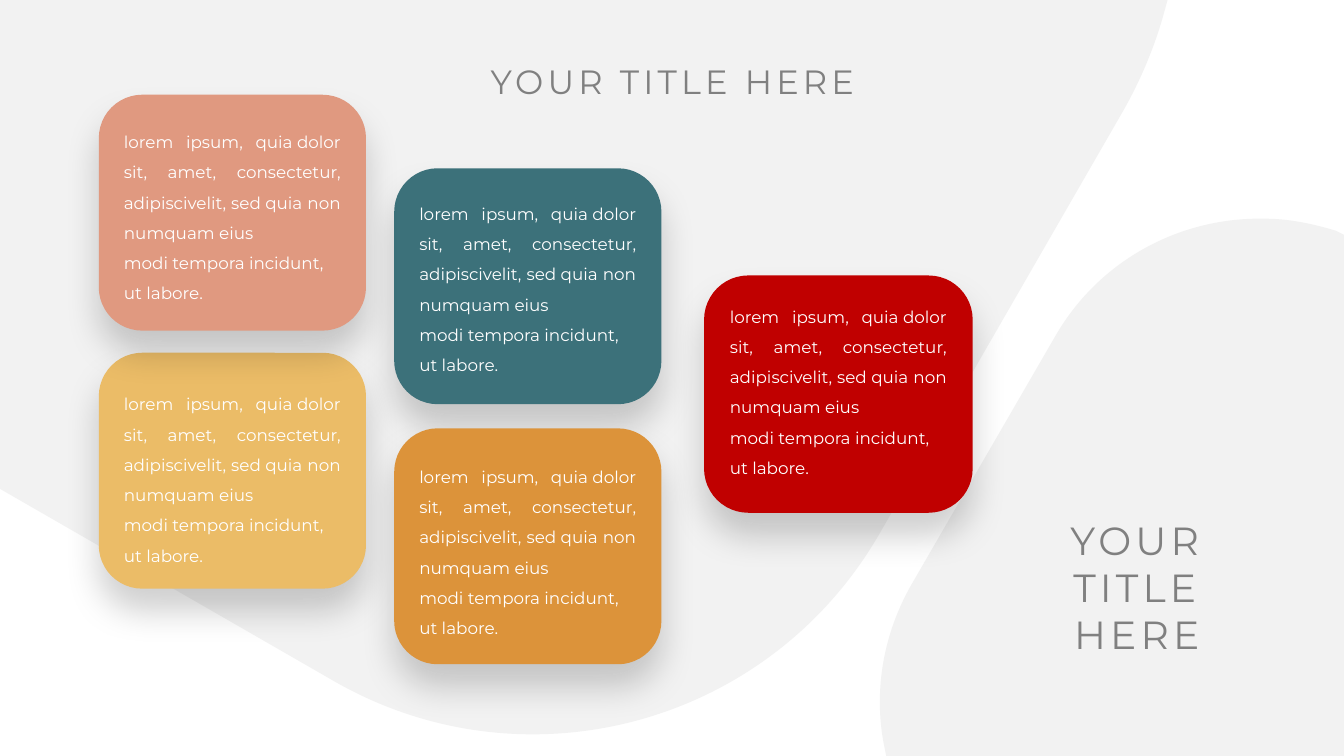
from pptx import Presentation
from pptx.dml.color import RGBColor
from pptx.enum.shapes import MSO_SHAPE as Preset
from pptx.enum.text import MSO_AUTO_SIZE as AutoSize, PP_ALIGN as Align
from pptx.oxml import parse_xml
from pptx.oxml.ns import nsdecls
from pptx.util import Inches, Pt

COLORS = {
    "blob": "F2F2F2", "title": "808080", "white": "FFFFFF", "shadow": "000000",
    "salmon": "E09980", "yellow": "EBBC67", "teal": "3C717A",
    "orange": "DC933A", "red": "C00000",
}
FONT = "Montserrat"
HARD_SPACE = chr(160)
BODY = ("lorem ipsum, quia_dolor sit, amet, consectetur, adipiscivelit, "
        "sed_quia non numquam_eius modi_tempora_incidunt, ut labore."
        ).replace("_", HARD_SPACE)
TITLE = "YOUR TITLE HERE"

CARD_SIZE = (2.65, 2.34)
TEXT_SIZE = (2.35, 1.88)
TEXT_INDENT = 0.15
CARDS = [
    ("yellow", 0.98, 3.5, 3.76),
    ("teal", 3.91, 1.67, 1.87),
    ("orange", 3.91, 4.25, 4.48),
    ("salmon", 0.98, 0.94, 1.16),
    ("red", 6.99, 2.74, 2.89),
]
TITLES = [
    ((10.08, 5.07, 2.39, 1.51), 28, True),
    ((4.76, 0.56, 3.82, 0.5), 24, False),
]
BLOBS = [
    ((8.73, 2.17, 4.61, 5.33),
     [(12.55, 2.17), (12.78, 2.17, 13.02, 2.22, 13.25, 2.29), (13.33, 2.33),
      (13.33, 7.5), (8.79, 7.5), (8.76, 7.35),
      (8.67, 6.84, 8.76, 6.29, 9.04, 5.8), (10.47, 3.33),
      (10.91, 2.57, 11.72, 2.15, 12.55, 2.17)]),
    ((0, 0, 11.58, 7.28),
     [(0, 0), (11.58, 0), (11.53, 0.18),
      (11.44, 0.49, 11.31, 0.8, 11.14, 1.1), (8.72, 5.3),
      (7.62, 7.2, 5.2, 7.85, 3.3, 6.75), (0, 4.85)]),
]


def color(name):
    return RGBColor.from_string(COLORS[name])


def outline_command(index, segment, left, top):
    tag = "moveTo" if index == 0 else "lnTo" if len(segment) == 2 else "cubicBezTo"
    points = "".join(f'<a:pt x="{Inches(x - left)}" y="{Inches(y - top)}"/>'
                     for x, y in zip(segment[::2], segment[1::2]))
    return parse_xml(f'<a:{tag} {nsdecls("a")}>{points}</a:{tag}>')


def add_blob(page, bounds, segments):
    left, top, width, height = bounds
    builder = page.shapes.build_freeform(Inches(left), Inches(top))
    builder.add_line_segments([(Inches(left + width), Inches(top + height))])
    blob = builder.convert_to_shape()
    outline = blob._element.spPr.find(".//{*}pathLst")[0]
    for command in list(outline):
        outline.remove(command)
    for index, segment in enumerate(segments):
        outline.append(outline_command(index, segment, left, top))
    outline.append(parse_xml(f'<a:close {nsdecls("a")}/>'))
    blob.shadow.inherit = False
    blob.fill.solid()
    blob.fill.fore_color.rgb = color("blob")
    blob.line.fill.background()


def add_text(page, place, text, size, shade, align, wrap=True, line_spacing=None, tracking=None):
    box = page.shapes.add_textbox(*map(Inches, place))
    frame = box.text_frame
    frame.word_wrap = wrap
    frame.auto_size = AutoSize.SHAPE_TO_FIT_TEXT
    para = frame.paragraphs[0]
    para.alignment = align
    if line_spacing:
        para.line_spacing = line_spacing
    span = para.add_run()
    span.text = text
    span.font.name = FONT
    span.font.size = Pt(size)
    span.font.color.rgb = color(shade)
    if tracking:
        span.font._element.set("spc", str(tracking * 100))


def add_card(page, shade, left, top, text_top):
    card = page.shapes.add_shape(Preset.ROUNDED_RECTANGLE,
                                 *map(Inches, (left, top, *CARD_SIZE)))
    card.adjustments[0] = 0.184
    card.fill.solid()
    card.fill.fore_color.rgb = color(shade)
    if shade == "red":
        card.line.color.rgb = color(shade)
        card.line.width = Pt(1)
    else:
        card.line.fill.background()
    card.shadow.inherit = False
    effects = card._element.spPr.find(".//{*}effectLst")
    effects.append(parse_xml(
        f'<a:outerShdw {nsdecls("a")} blurRad="{Pt(25)}" dist="{Pt(16)}" '
        f'dir="5400000" algn="t" rotWithShape="0"><a:srgbClr val="{COLORS["shadow"]}">'
        '<a:alpha val="19000"/></a:srgbClr></a:outerShdw>'))
    add_text(page, (left + TEXT_INDENT, text_top, *TEXT_SIZE), BODY, 12, "white",
             Align.JUSTIFY, line_spacing=1.5)


def main():
    deck = Presentation()
    deck.slide_width, deck.slide_height = Inches(13.33), Inches(7.5)
    page = deck.slides.add_slide(deck.slide_layouts[6])
    for bounds, segments in BLOBS:
        add_blob(page, bounds, segments)
    for card in CARDS:
        add_card(page, *card)
    for place, size, wrap in TITLES:
        add_text(page, place, TITLE, size, "title", Align.CENTER, wrap=wrap, tracking=3)
    deck.save("out.pptx")


if __name__ == "__main__":
    main()
